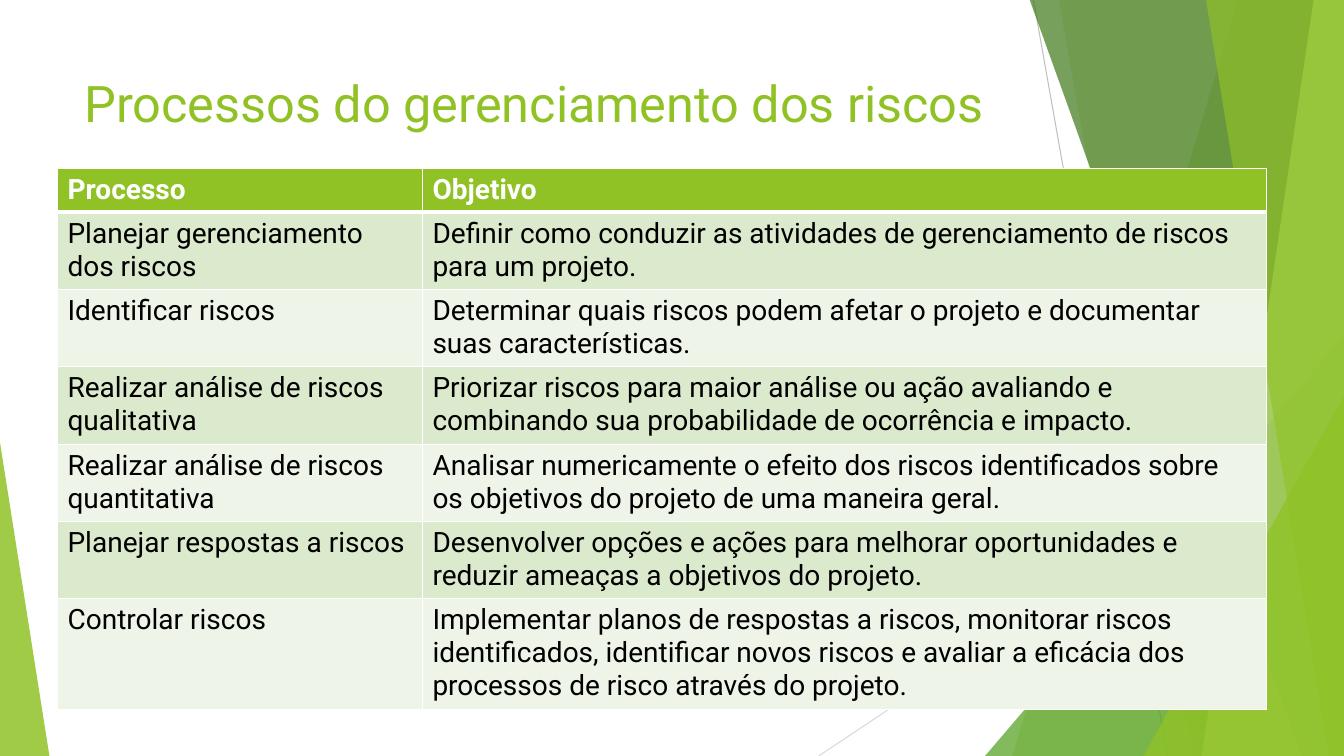
"""Build the slide on the processes of risk management."""
from lxml.etree import SubElement
from pptx import Presentation
from pptx.dml.color import RGBColor
from pptx.enum.shapes import MSO_CONNECTOR, MSO_SHAPE
from pptx.oxml.ns import qn
from pptx.util import Pt

PX = 9144
WIDE, HIGH = 1333, 750
GREEN, WHITE, BLACK = "90C226", "FFFFFF", "000000"


def color(code):
    return RGBColor.from_string(code)


def paint(shape, code, alpha):
    shape.shadow.inherit = False
    shape.line.fill.background()
    shape.fill.solid()
    shape.fill.fore_color.rgb = color(code)
    tint = shape.fill._xPr.find(qn("a:solidFill"))[0]
    SubElement(tint, qn("a:alpha"), val=str(alpha * 1000))


deck = Presentation()
deck.slide_width, deck.slide_height = WIDE * PX, HIGH * PX
slide = deck.slides.add_slide(deck.slide_layouts[6])
shapes = slide.shapes

lines = [
    (1025, 0, 1158, HIGH, "BFBFBF"),
    (WIDE, 403, 812, HIGH, "D9D9D9"),
]
for x1, y1, x2, y2, code in lines:
    line = shapes.add_connector(
        MSO_CONNECTOR.STRAIGHT, x1 * PX, y1 * PX, x2 * PX, y2 * PX)
    line.line.color.rgb = color(code)
    line.line.width = Pt(0.75)
    SubElement(line._element.spPr, qn("a:effectLst"))

bands = [
    ("band", 1228, 1004, GREEN, 30),
    ("band", 1050, 1183, GREEN, 20),
    ("wedge", 977, 333, "54A021", 72),
    ("band", 1021, 1291, "3F7819", 70),
    ("band", 1303, 1192, "C0E474", 70),
    ("band", 1196, 1318, GREEN, 65),
    ("wedge", 1134, 393, GREEN, 80),
    ("corner", 49, 439, GREEN, 85),
]
for kind, a, b, code, alpha in bands:
    if kind == "band":
        form = shapes.build_freeform(a, -1, scale=PX)
        form.add_line_segments([(WIDE, -1), (WIDE, HIGH), (b, HIGH)])
        shape = form.convert_to_shape()
    else:
        left, right = (a, WIDE) if kind == "wedge" else (0, a)
        shape = shapes.add_shape(
            MSO_SHAPE.ISOSCELES_TRIANGLE, left * PX, b * PX,
            (right - left) * PX, (HIGH - b) * PX)
        shape.adjustments[0] = 1 if kind == "wedge" else 0
    paint(shape, code, alpha)

title = shapes.add_textbox(74 * PX, 67 * PX, 940 * PX, 144 * PX)
title.text_frame.word_wrap = True
run = title.text_frame.paragraphs[0].add_run()
run.text = "Processos do gerenciamento dos riscos"
run.font.name, run.font.size = "Roboto", Pt(36)
run.font.color.rgb = color(GREEN)

rows = [
    ("Processo", "Objetivo"),
    ("Planejar gerenciamento dos riscos",
     "Definir como conduzir as atividades de gerenciamento de riscos "
     "para um projeto."),
    ("Identificar riscos",
     "Determinar quais riscos podem afetar o projeto e documentar "
     "suas características."),
    ("Realizar análise de riscos qualitativa",
     "Priorizar riscos para maior análise ou ação avaliando e "
     "combinando sua probabilidade de ocorrência e impacto."),
    ("Realizar análise de riscos quantitativa",
     "Analisar numericamente o efeito dos riscos identificados sobre "
     "os objetivos do projeto de uma maneira geral."),
    ("Planejar respostas a riscos",
     "Desenvolver opções e ações para melhorar oportunidades e "
     "reduzir ameaças a objetivos do projeto."),
    ("Controlar riscos",
     "Implementar planos de respostas a riscos, monitorar riscos "
     "identificados, identificar novos riscos e avaliar a eficácia dos "
     "processos de risco através do projeto."),
]
widths = [362, 837]
heights = [42] + [75] * 5 + [108]
table = shapes.add_table(
    len(rows), 2, 57 * PX, 167 * PX, sum(widths) * PX, sum(heights) * PX).table
for col, width in zip(table.columns, widths):
    col.width = width * PX
for r, texts in enumerate(rows):
    table.rows[r].height = heights[r] * PX
    head = r == 0
    fill = GREEN if head else ("EEF4E8", "DBE9CD")[r % 2]
    for c, text in enumerate(texts):
        cell = table.cell(r, c)
        run = cell.text_frame.paragraphs[0].add_run()
        run.text = text
        run.font.name, run.font.size = "Roboto", Pt(20)
        run.font.bold = head
        run.font.color.rgb = color(WHITE if head else BLACK)
        props = cell._tc.get_or_add_tcPr()
        for side in "LRTB":
            thick = (r, side) in [(0, "B"), (1, "T")]
            edge = SubElement(
                props, qn("a:ln" + side), w=str(Pt(3 if thick else 1)))
            solid = SubElement(edge, qn("a:solidFill"))
            SubElement(solid, qn("a:srgbClr"), val=WHITE)
        cell.fill.solid()
        cell.fill.fore_color.rgb = color(fill)

deck.save("out.pptx")
